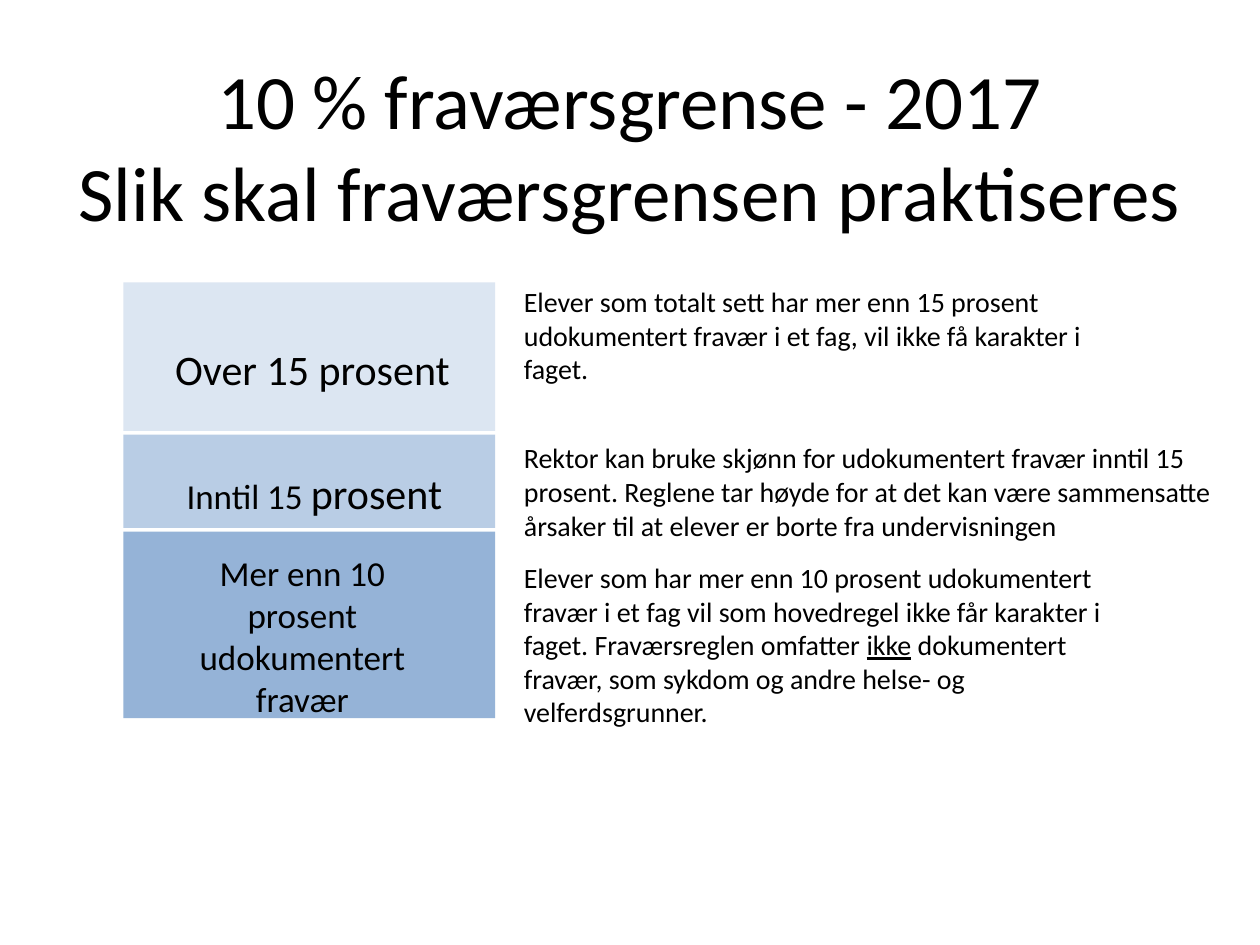
from pptx import Presentation
from pptx.dml.color import RGBColor
from pptx.enum.shapes import MSO_SHAPE
from pptx.enum.text import MSO_ANCHOR, PP_ALIGN
from pptx.util import Inches, Pt

RECT = MSO_SHAPE.RECTANGLE
MIDDLE, TOP = MSO_ANCHOR.MIDDLE, MSO_ANCHOR.TOP
CENTER, LEFT = PP_ALIGN.CENTER, PP_ALIGN.LEFT
BLACK = RGBColor(0x00, 0x00, 0x00)
PALE = RGBColor(0xDC, 0xE6, 0xF2)
LIGHT = RGBColor(0xB9, 0xCD, 0xE5)
MEDIUM = RGBColor(0x95, 0xB3, 0xD7)
FONT = "Calibri"

# Runs are (text, size, underlined); boxes are left, top, width, height in inches
TITLE = [("10 % fraværsgrense - 2017\vSlik skal fraværsgrensen praktiseres", 44, False)]
TITLE_BOX = (0.5, 0.29, 9, 1.72)
BAND_LEFT, BAND_TOP, BAND_WIDTH, BAND_GAP = 0.98, 2.24, 2.95, 0.03
RULE_LEFT = 4.06

LEVELS = [
    {
        "color": PALE, "height": 1.18,
        "label": [("Over 15 prosent", 24, False)],
        "label_box": (1.22, 2.68, 2.52, 0.5),
        "rule": [("Elever som totalt sett har mer enn 15 prosent udokumentert fravær "
                  "i et fag, vil ikke få karakter i faget.", 16, False)],
        "rule_box": (RULE_LEFT, 2.21, 4.67, 0.91),
    },
    {
        "color": LIGHT, "height": 0.74,
        "label": [("Inntil 15 ", 20, False), ("prosent", 24, False)],
        "label_box": (1.06, 3.66, 2.87, 0.5),
        "rule": [("Rektor kan bruke skjønn for udokumentert fravær inntil 15 prosent. "
                  "Reglene tar høyde for at det kan være sammensatte årsaker til at "
                  "elever er borte fra undervisningen", 16, False)],
        "rule_box": (RULE_LEFT, 3.45, 5.75, 0.91),
    },
    {
        "color": MEDIUM, "height": 1.48,
        "label": [("Mer enn 10 prosent udokumentert fravær", 20, False)],
        "label_box": (1.2, 4.33, 2.4, 1.45),
        "rule": [("Elever som har mer enn 10 prosent udokumentert fravær i et fag vil "
                  "som hovedregel ikke får karakter i faget. Fraværsreglen omfatter ",
                  16, False),
                 ("ikke", 16, True),
                 (" dokumentert fravær, som sykdom og andre helse- og "
                  "velferdsgrunner.", 16, False)],
        "rule_box": (RULE_LEFT, 4.4, 4.84, 1.72),
    },
]


def add_text(slide, box, runs, align=LEFT, anchor=TOP):
    tf = slide.shapes.add_textbox(*map(Inches, box)).text_frame
    tf.word_wrap = True
    tf.vertical_anchor = anchor
    p = tf.paragraphs[0]
    p.alignment = align
    for text, size, underlined in runs:
        # A vertical tab marks a line break inside the paragraph
        for i, line in enumerate(text.split("\v")):
            if i:
                p.add_line_break()
            r = p.add_run()
            r.text = line
            r.font.name = FONT
            r.font.size = Pt(size)
            r.font.underline = underlined
            r.font.color.rgb = BLACK


def add_band(slide, top, height, color):
    sp = slide.shapes.add_shape(
        RECT, *map(Inches, (BAND_LEFT, top, BAND_WIDTH, height)))
    sp.shadow.inherit = False
    sp.fill.solid()
    sp.fill.fore_color.rgb = color
    sp.line.fill.background()


def main():
    prs = Presentation()
    prs.slide_width, prs.slide_height = Inches(10), Inches(7.5)
    s = prs.slides.add_slide(prs.slide_layouts[6])
    add_text(s, TITLE_BOX, TITLE, CENTER, MIDDLE)
    top = BAND_TOP
    for level in LEVELS:
        add_band(s, top, level["height"], level["color"])
        add_text(s, level["label_box"], level["label"], CENTER)
        add_text(s, level["rule_box"], level["rule"])
        top += level["height"] + BAND_GAP
    prs.save("out.pptx")


if __name__ == "__main__":
    main()
